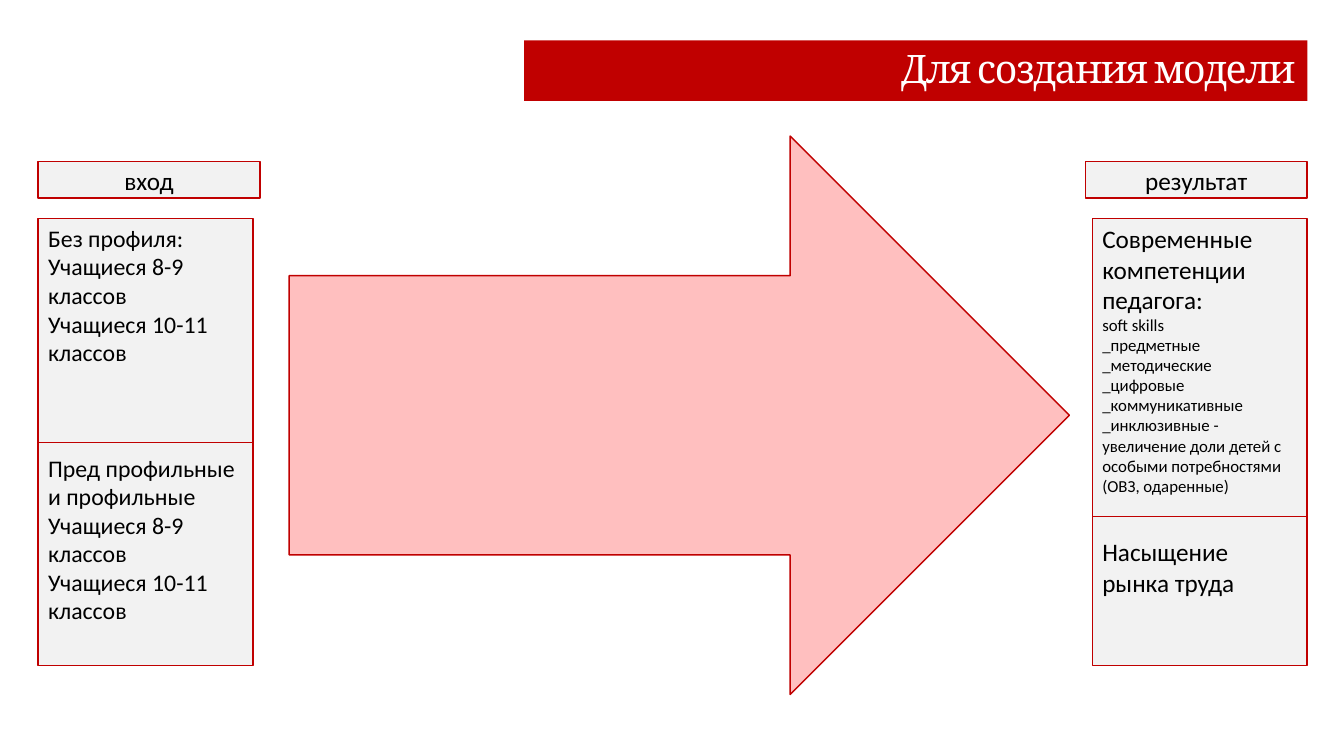
from dataclasses import dataclass

from lxml import etree
from pptx import Presentation
from pptx.dml.color import RGBColor
from pptx.enum.shapes import MSO_CONNECTOR, MSO_SHAPE
from pptx.enum.text import MSO_ANCHOR, MSO_AUTO_SIZE, PP_ALIGN
from pptx.oxml.ns import qn
from pptx.util import Pt

RECTANGLE = MSO_SHAPE.RECTANGLE
RIGHT_ARROW = MSO_SHAPE.RIGHT_ARROW
STRAIGHT = MSO_CONNECTOR.STRAIGHT
MIDDLE = MSO_ANCHOR.MIDDLE
TOP = MSO_ANCHOR.TOP
NO_AUTOFIT = MSO_AUTO_SIZE.NONE
LEFT = PP_ALIGN.LEFT
CENTER = PP_ALIGN.CENTER
RIGHT = PP_ALIGN.RIGHT
LEFT_SIDE, RIGHT_SIDE = 1, 3
TITLE_ONLY = 5


@dataclass(frozen=True)
class Theme:
    red: RGBColor = RGBColor(0xC0, 0x00, 0x00)
    pink: RGBColor = RGBColor(0xFF, 0xBF, 0xBF)
    panel: RGBColor = RGBColor(0xF2, 0xF2, 0xF2)
    text: RGBColor = RGBColor(0x00, 0x00, 0x00)
    title_text: RGBColor = RGBColor(0xFF, 0xFF, 0xFF)
    title_font: str = "Cambria"
    body_font: str = "Calibri"
    title_size: float = 28
    heading_size: float = 18
    body_size: float = 17
    small_size: float = 12


THEME = Theme()

MARGIN_LEFT = 27.3
MARGIN_RIGHT = 933.7
LABEL_TOP, LABEL_WIDTH, LABEL_HEIGHT = 115.5, 158.4, 26
PANEL_TOP, PANEL_WIDTH, PANEL_HEIGHT = 156.2, 153.4, 319
RESULT_DIVIDER = 368.6

STUDENTS = ["Учащиеся 8-9 классов", "Учащиеся 10-11 классов"]
COMPETENCIES = [
    "soft skills",
    "_предметные",
    "_методические",
    "_цифровые",
    "_коммуникативные",
    "_инклюзивные - увеличение доли детей с особыми потребностями (ОВЗ, одаренные)",
]


def add_run(paragraph, text, size, font=THEME.body_font, color=THEME.text):
    run = paragraph.add_run()
    run.text = text
    run.font.name = font
    run.font.size = Pt(size)
    run.font.color.rgb = color
    return run


def add_title(slide, text):
    title = slide.shapes.title
    title.left, title.top = Pt(374.4), Pt(28.8)
    title.width, title.height = Pt(559.4), Pt(43.2)
    title.fill.solid()
    title.fill.fore_color.rgb = THEME.red
    frame = title.text_frame
    frame.auto_size = NO_AUTOFIT
    frame.word_wrap = True
    frame.vertical_anchor = MIDDLE
    frame.margin_left = frame.margin_top = frame.margin_bottom = 0
    frame.margin_right = Pt(8.6)
    paragraph = frame.paragraphs[0]
    paragraph.alignment = RIGHT
    paragraph.line_spacing = 0.9
    run = add_run(paragraph, text, THEME.title_size, THEME.title_font, THEME.title_text)
    run.font._element.set("spc", "-100")


def add_outlined_shape(slide, preset, left, top, width, height, fill):
    shape = slide.shapes.add_shape(preset, Pt(left), Pt(top), Pt(width), Pt(height))
    shape.shadow.inherit = False
    shape.fill.solid()
    shape.fill.fore_color.rgb = fill
    shape.line.color.rgb = THEME.red
    shape.line.width = Pt(1)
    return shape


def add_label(slide, left, text):
    label = add_outlined_shape(
        slide, RECTANGLE, left, LABEL_TOP, LABEL_WIDTH, LABEL_HEIGHT, THEME.panel
    )
    label.text_frame.word_wrap = True
    label.text_frame.vertical_anchor = MIDDLE
    paragraph = label.text_frame.paragraphs[0]
    paragraph.alignment = CENTER
    add_run(paragraph, text, THEME.heading_size)


def add_panel(slide, left, entries):
    panel = add_outlined_shape(
        slide, RECTANGLE, left, PANEL_TOP, PANEL_WIDTH, PANEL_HEIGHT, THEME.panel
    )
    frame = panel.text_frame
    frame.word_wrap = True
    frame.vertical_anchor = TOP
    for index, (text, size, space_before) in enumerate(entries):
        paragraph = frame.add_paragraph() if index else frame.paragraphs[0]
        paragraph.alignment = LEFT
        paragraph.space_before = Pt(space_before)
        add_run(paragraph, text, size)
    return panel


def add_divider(slide, panel, top):
    divider = slide.shapes.add_connector(
        STRAIGHT, panel.left, Pt(top), panel.left + panel.width, Pt(top)
    )
    divider.line.color.rgb = THEME.red
    divider.line.width = Pt(0.5)
    etree.SubElement(divider._element.spPr, qn("a:effectLst"))
    return divider


def main():
    presentation = Presentation()
    presentation.slide_width, presentation.slide_height = Pt(960), Pt(540)
    slide = presentation.slides.add_slide(presentation.slide_layouts[TITLE_ONLY])

    add_title(slide, "Для создания модели")

    students = [(text, THEME.body_size, 0) for text in STUDENTS]
    input_panel = add_panel(
        slide,
        MARGIN_LEFT,
        [("Без профиля:", THEME.body_size, 0)]
        + students
        + [("Пред профильные и профильные", THEME.body_size, 62)]
        + students,
    )
    add_label(slide, MARGIN_LEFT, "вход")
    input_divider = add_divider(slide, input_panel, PANEL_TOP + PANEL_HEIGHT / 2)
    input_divider.begin_connect(input_panel, LEFT_SIDE)
    input_divider.end_connect(input_panel, RIGHT_SIDE)

    add_label(slide, MARGIN_RIGHT - LABEL_WIDTH, "результат")
    result_panel = add_panel(
        slide,
        MARGIN_RIGHT - PANEL_WIDTH,
        [("Современные компетенции педагога:", THEME.heading_size, 0)]
        + [(text, THEME.small_size, 0) for text in COMPETENCIES]
        + [("Насыщение рынка труда", THEME.heading_size, 29.3)],
    )
    add_divider(slide, result_panel, RESULT_DIVIDER)

    add_outlined_shape(slide, RIGHT_ARROW, 206.6, 97.2, 557.3, 398.9, THEME.pink)

    presentation.save("out.pptx")


if __name__ == "__main__":
    main()
